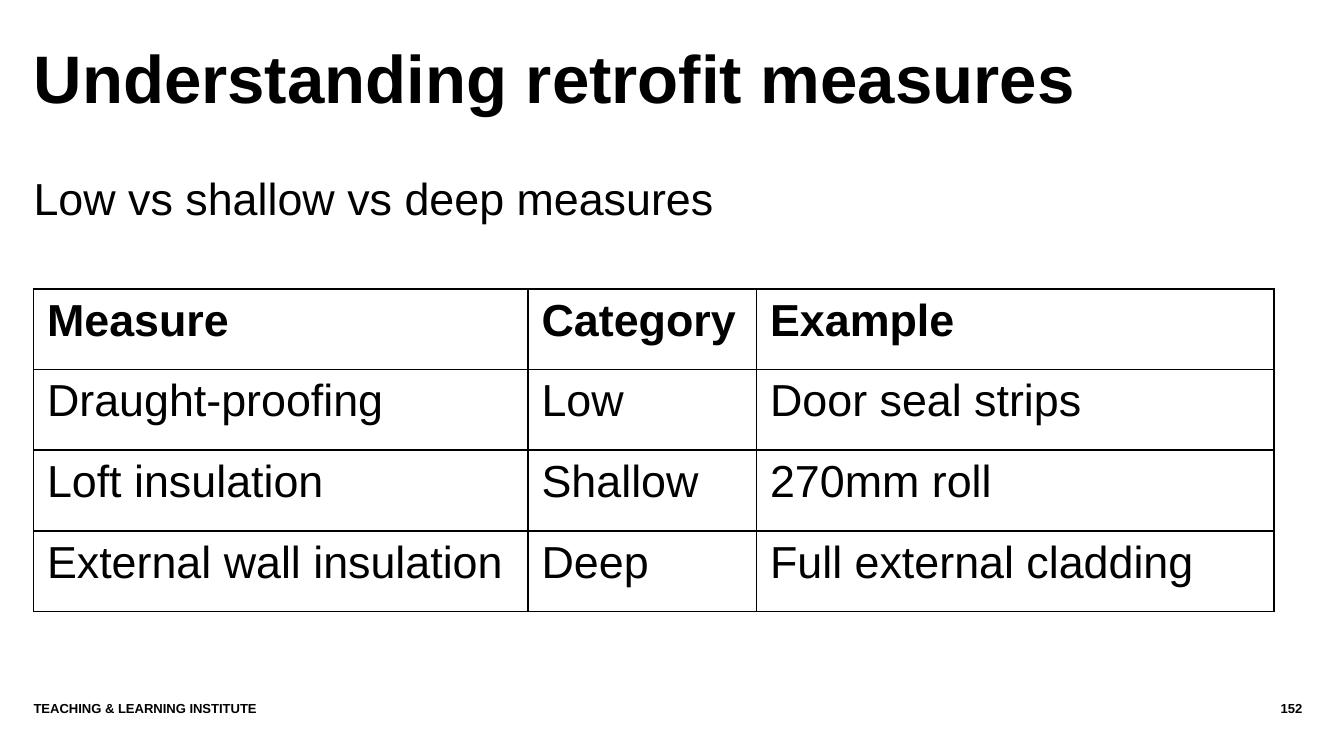
import pptx
import pptx.util
import pptx.dml.color
import pptx.enum.text
import pptx.oxml
import pptx.oxml.ns

WIDE = 10
HIGH = WIDE * 9 / 16
LEFT, SPAN = 0.25, 9.23
INK = "000000"
FONT = "Arial"
ALIGN = pptx.enum.text.PP_ALIGN

ROWS = [
    ("Measure", "Category", "Example"),
    ("Draught-proofing", "Low", "Door seal strips"),
    ("Loft insulation", "Shallow", "270mm roll"),
    ("External wall insulation", "Deep", "Full external cladding"),
]
COLS = (3.68, 1.7, 3.85)


def color(code):
    return pptx.dml.color.RGBColor.from_string(code)


def inches(box):
    return [pptx.util.Inches(n) for n in box]


def write(frame, text, size, bold=False, align=ALIGN.LEFT):
    frame.text = text
    for para in frame.paragraphs:
        para.alignment = align
        for run in para.runs:
            run.font.name = FONT
            run.font.size = pptx.util.Pt(size)
            run.font.bold = bold
            run.font.color.rgb = color(INK)


def fit(frame):
    """Wrap the text in a frame that has no margins and a fixed size."""
    frame.margin_left = frame.margin_right = 0
    frame.margin_top = frame.margin_bottom = 0
    frame.word_wrap = True
    frame.auto_size = pptx.enum.text.MSO_AUTO_SIZE.NONE
    frame.vertical_anchor = pptx.enum.text.MSO_ANCHOR.TOP


def label(slide, box, text, size, **style):
    frame = slide.shapes.add_textbox(*inches(box)).text_frame
    fit(frame)
    write(frame, text, size, **style)


def heading(slide, box, text):
    title = slide.shapes.title
    title.left, title.top, title.width, title.height = inches(box)
    fit(title.text_frame)
    write(title.text_frame, text, 36, bold=True)


def border(cell, code, points):
    props = cell._tc.get_or_add_tcPr()
    for index, side in enumerate(("lnL", "lnR", "lnT", "lnB")):
        line = pptx.oxml.parse_xml(
            f'<a:{side} {pptx.oxml.ns.nsdecls("a")} w="{pptx.util.Pt(points)}">'
            f'<a:solidFill><a:srgbClr val="{code}"/></a:solidFill></a:{side}>'
        )
        props.insert(index, line)


def grid(slide, box, rows, cols):
    table = slide.shapes.add_table(len(rows), len(cols), *inches(box)).table
    table.horz_banding = False
    for col, width in zip(table.columns, cols):
        col.width = pptx.util.Inches(width)
    for r, row in enumerate(rows):
        for c, text in enumerate(row):
            cell = table.cell(r, c)
            cell.fill.background()
            border(cell, INK, 1)
            write(cell.text_frame, text, 24, bold=r == 0)


def footer(slide, box, text, number):
    left, top, width, height = box
    edge = 0.99
    label(slide, (left, top, width - edge, height), text, 7, bold=True)
    label(slide, (left + width - edge, top, edge, height), number, 7,
          bold=True, align=ALIGN.RIGHT)


def main():
    deck = pptx.Presentation()
    deck.slide_width, deck.slide_height = inches((WIDE, HIGH))
    slide = deck.slides.add_slide(deck.slide_layouts[5])
    heading(slide, (LEFT, 0.27, SPAN, 0.76), "Understanding retrofit measures")
    label(slide, (LEFT, 1.27, 8.39, 0.68), "Low vs shallow vs deep measures", 24)
    grid(slide, (LEFT, 2.15, SPAN, 2.4), ROWS, COLS)
    footer(slide, (LEFT, 5.21, 9.44, 0.3), "TEACHING & LEARNING INSTITUTE", "152")
    deck.save("out.pptx")


if __name__ == "__main__":
    main()
